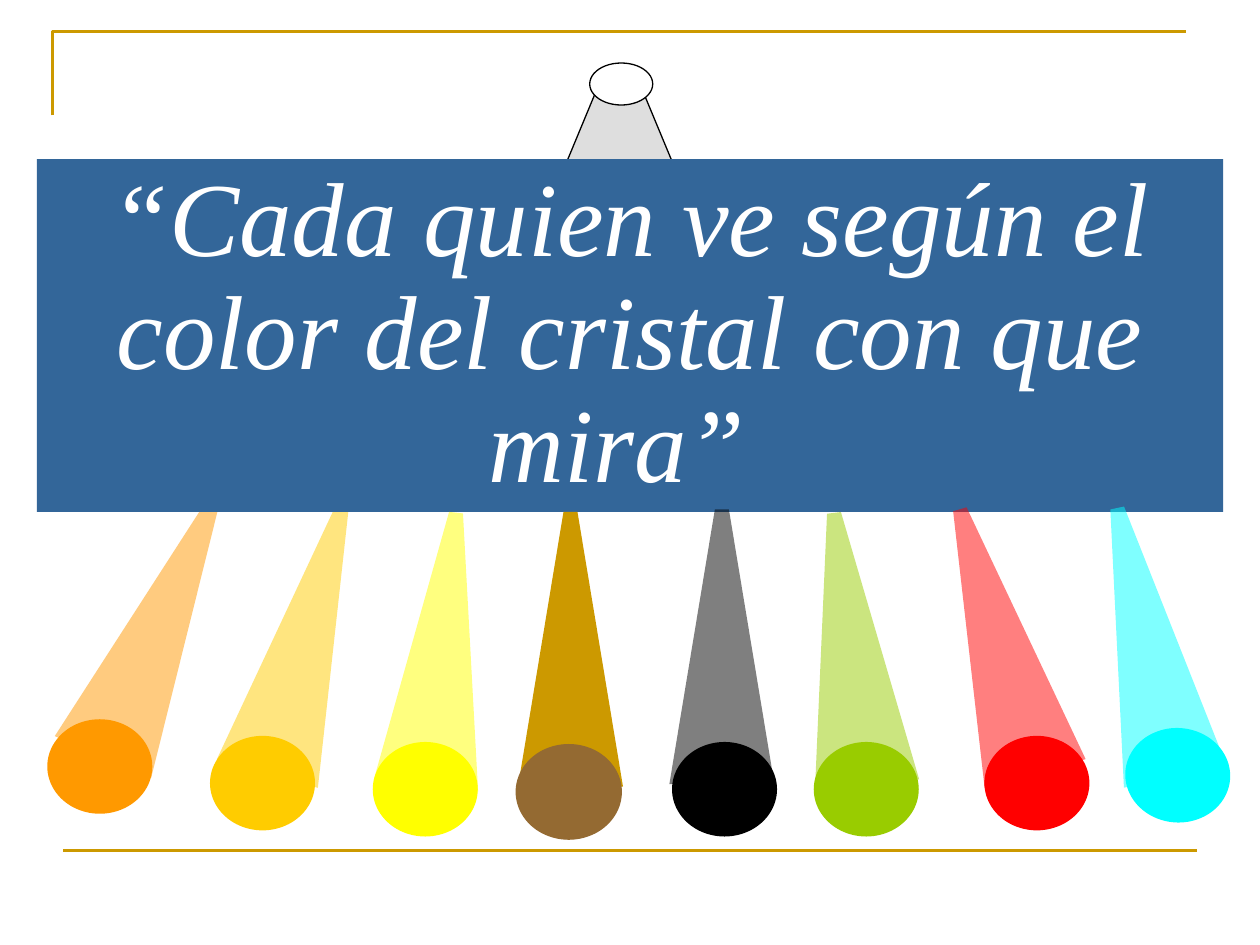
import dataclasses

import pptx
import pptx.dml.color
import pptx.enum.shapes
import pptx.enum.text
import pptx.oxml
import pptx.oxml.ns
import pptx.util

Pt = pptx.util.Pt
qn = pptx.oxml.ns.qn


@dataclasses.dataclass(frozen=True)
class Theme:
    font: str = "Times New Roman"
    quote_size: float = 60
    quote_text: str = "FFFFFF"
    panel: str = "336699"
    gold: str = "CC9900"
    outline: str = "000000"
    lamp: str = "FFFFFF"
    lamp_light: str = "BFBFBF"
    orange: str = "FF9900"
    amber: str = "FFCC00"
    yellow: str = "FFFF00"
    brown: str = "946A32"
    black: str = "000000"
    green: str = "99CC00"
    red: str = "FF0000"
    cyan: str = "00FFFF"
    rule_width: float = 1.5
    thin_line: float = 0.75


def rgb(color):
    return pptx.dml.color.RGBColor.from_string(color)


def write_text(tf, text, font, size, color, italic=False, line_spacing=1.0):
    p = tf.paragraphs[0]
    p.alignment = pptx.enum.text.PP_ALIGN.CENTER
    p.line_spacing = line_spacing
    r = p.add_run()
    r.text = text
    r.font.name = font
    r.font.size = Pt(size)
    r.font.italic = italic
    r.font.color.rgb = rgb(color)


class SlideBuilder:
    def __init__(self, slide, theme):
        self.slide = slide
        self.theme = theme

    def paint(self, sp, fill=None, line=None, width=None, opacity=100):
        sp.shadow.inherit = False
        if fill:
            sp.fill.solid()
            sp.fill.fore_color.rgb = rgb(fill)
            if opacity < 100:
                color = sp.element.spPr.find(qn("a:solidFill")).find(qn("a:srgbClr"))
                alpha = pptx.oxml.parse_xml(
                    f'<a:alpha {pptx.oxml.ns.nsdecls("a")} val="{opacity * 1000}"/>')
                color.append(alpha)
        else:
            sp.fill.background()
        if line:
            sp.line.color.rgb = rgb(line)
            sp.line.width = Pt(width or self.theme.thin_line)
        else:
            sp.line.fill.background()

    def outline(self, shapes, points, closed=True, **style):
        start, *rest = [(Pt(x), Pt(y)) for x, y in points]
        builder = shapes.build_freeform(*start)
        builder.add_line_segments(rest, close=closed)
        sp = builder.convert_to_shape()
        self.paint(sp, **style)
        return sp

    def rule(self, x1, y1, x2, y2):
        line = self.slide.shapes.add_connector(
            pptx.enum.shapes.MSO_CONNECTOR.STRAIGHT, Pt(x1), Pt(y1), Pt(x2), Pt(y2))
        line.line.color.rgb = rgb(self.theme.gold)
        line.line.width = Pt(self.theme.rule_width)
        effects = pptx.oxml.parse_xml(f'<a:effectLst {pptx.oxml.ns.nsdecls("a")}/>')
        line.element.spPr.append(effects)

    def beam(self, shapes, x, y, w, h, inset, rotation=0, **style):
        """Draw a cone of light, narrowed at the top by inset on each side."""
        points = [(x, y + h), (x + inset, y), (x + w - inset, y), (x + w, y + h)]
        sp = self.outline(shapes, points, **style)
        sp.rotation = rotation

    def disc(self, shapes, x, y, w, h, rotation=0, **style):
        sp = shapes.add_shape(
            pptx.enum.shapes.MSO_SHAPE.OVAL, Pt(x), Pt(y), Pt(w), Pt(h))
        sp.rotation = rotation
        self.paint(sp, **style)

    def lamp(self):
        shapes = self.slide.shapes.add_group_shape().shapes
        line = self.theme.outline
        self.beam(shapes, 312, 50, 84, 71, inset=29.5,
                  fill=self.theme.lamp_light, opacity=50, line=line)
        self.disc(shapes, 337, 36, 36, 24, fill=self.theme.lamp, line=line)

    def spotlight(self, beam_at, tilt, disc_at, color, light=None,
                  disc_line=None, disc_tilt=0):
        """Group a beam with its disc; the beam is see-through unless light is set."""
        shapes = self.slide.shapes.add_group_shape().shapes
        self.beam(shapes, *beam_at, 60, 157, inset=26, rotation=tilt,
                  fill=light or color, opacity=100 if light else 50)
        self.disc(shapes, *disc_at, 60, 54, rotation=disc_tilt,
                  fill=color, line=disc_line)

    def title(self, text, x, y, w, h):
        sp = self.slide.shapes.title
        sp.left, sp.top, sp.width, sp.height = Pt(x), Pt(y), Pt(w), Pt(h)
        sp.fill.solid()
        sp.fill.fore_color.rgb = rgb(self.theme.panel)
        tf = sp.text_frame
        tf.word_wrap = True
        tf.auto_size = pptx.enum.text.MSO_AUTO_SIZE.NONE
        tf.vertical_anchor = pptx.enum.text.MSO_ANCHOR.MIDDLE
        write_text(tf, text, font=self.theme.font, size=self.theme.quote_size,
                   color=self.theme.quote_text, italic=True, line_spacing=0.9)
        # Bring the panel in front of everything drawn so far.
        self.slide.shapes.element.append(sp.element)


def main():
    prs = pptx.Presentation()
    prs.slide_width, prs.slide_height = Pt(720), Pt(540)
    theme = Theme()
    s = SlideBuilder(prs.slides.add_slide(prs.slide_layouts[5]), theme)

    s.outline(s.slide.shapes, [(30, 66), (30, 18), (678, 18)], closed=False,
              line=theme.gold, width=theme.rule_width)
    s.rule(36, 486, 684, 486)
    s.lamp()

    s.spotlight((60, 282), 23.4, (27, 411), theme.orange)
    s.spotlight((144, 288), 15.7, (120, 420.5), theme.amber)
    s.title("“Cada quien ve según el color del cristal con que mira” ",
            21, 91, 678, 201.5)
    s.spotlight((222, 292.5), 6.3, (213, 424), theme.yellow)
    s.spotlight((296, 292.5), 0, (295, 425.5), theme.brown,
                light=theme.gold, disc_line=theme.brown)
    s.spotlight((382.5, 291), 0, (384, 424), theme.black)
    s.spotlight((456, 292.5), -6.9, (465, 424), theme.green)
    s.spotlight((540, 288), -15.9, (562.5, 420.5), theme.red)
    s.spotlight((625, 288.5), -12.2, (643, 416), theme.cyan, disc_tilt=4.2)

    prs.save("out.pptx")


if __name__ == "__main__":
    main()
